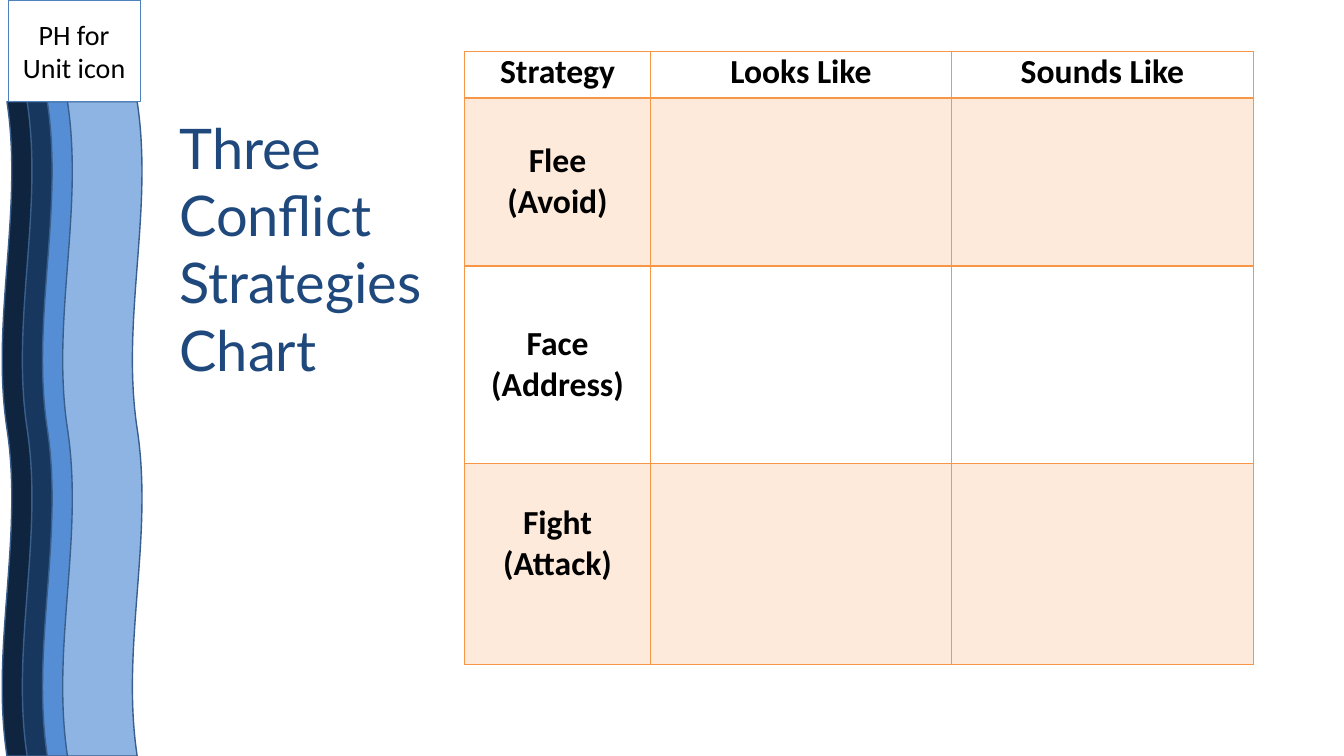
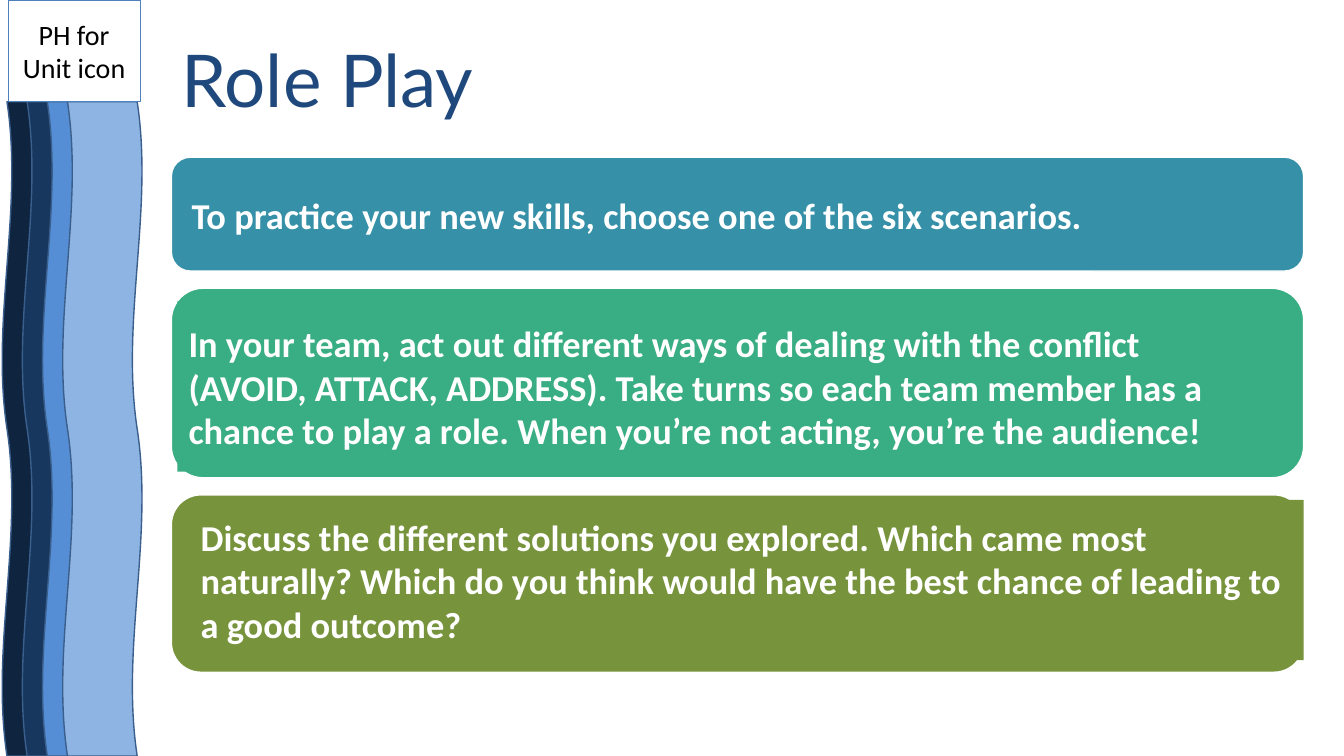
from pptx import Presentation
from pptx.dml.color import RGBColor
from pptx.enum.shapes import MSO_SHAPE as Shape
from pptx.enum.text import MSO_ANCHOR as Anchor, MSO_AUTO_SIZE as Fit, PP_ALIGN as Align
from pptx.oxml import parse_xml
from pptx.oxml.ns import nsdecls
from pptx.util import Inches, Pt

WHITE, BLACK, NAVY = "FFFFFF", "000000", "1F497D"
ORANGE, PEACH = "F79646", "FDEADA"
WAVES = ["0F243E", "17375E", "558ED5", "8EB4E3"]

HEADS = ["Strategy", "Looks Like", "Sounds Like"]
WAYS = [["Flee", "(Avoid)"], ["Face", "(Address)"], ["Fight", "(Attack)"]]
WIDTHS = [1.84, 2.99, 2.99]
HEIGHTS = [0.46, 1.67, 1.96, 1.99]

# text, colour, band top and height, text box, whether the text box is filled
STEPS = [
    ("To practice your new skills, choose one of the six scenarios.",
     "3690A8", 1.56, 1.13, (1.79, 1.62, 11.05, 1.02), False),
    ("In your team, act out different ways of dealing with the conflict "
     "(AVOID, ATTACK, ADDRESS). Take turns so each team member has a chance "
     "to play a role. When you’re not acting, you’re the audience!",
     "39AD84", 2.86, 1.88, (1.76, 2.99, 10.72, 1.69), True),
    ("Discuss the different solutions you explored. Which came most naturally? "
     "Which do you think would have the best chance of leading to a good outcome?",
     "77933C", 4.91, 1.76, (1.88, 4.96, 11.05, 1.59), True),
]


def rgb(code):
    return RGBColor.from_string(code)


def write(frame, *lines, size, color, font="Calibri", bold=False,
          align=Align.LEFT, space=None):
    frame.word_wrap = True
    for i, line in enumerate(lines):
        para = frame.add_paragraph() if i else frame.paragraphs[0]
        para.alignment = align
        para.line_spacing = space
        run = para.add_run()
        run.text = line
        face = run.font
        face.name, face.size, face.bold = font, Pt(size), bold
        face.color.rgb = rgb(color)


def draw(slide, kind, box, fill=None, line=None, width=1):
    shape = slide.shapes.add_shape(kind, *map(Inches, box))
    shape.shadow.inherit = False
    if fill:
        shape.fill.solid()
        shape.fill.fore_color.rgb = rgb(fill)
    else:
        shape.fill.background()
    if line:
        shape.line.color.rgb = rgb(line)
        shape.line.width = Pt(width)
    else:
        shape.line.fill.background()
    return shape


def brand(slide):
    """Build the side waves and icon box, then move them to the slide's layout."""
    parts = []
    for i, fill in enumerate(WAVES):
        wave = draw(slide, Shape.DOUBLE_WAVE, (-2.83 + 0.2 * i, 3.86, 6.49, 0.79),
                    fill, "3A5F8C")
        wave.rotation = 270
        parts.append(wave)
    icon = draw(slide, Shape.RECTANGLE, (0.08, 0, 1.31, 1.01), line="4F81BD", width=0.75)
    write(icon.text_frame, "PH for Unit icon", size=20, color=BLACK, align=Align.CENTER)
    tree = slide.slide_layout.element.cSld.spTree
    for part in parts + [icon]:
        tree.append(part.element)


def head(slide, text, box, size, space=None):
    title = slide.shapes.title
    title.left, title.top, title.width, title.height = map(Inches, box)
    frame = title.text_frame
    frame.auto_size = Fit.NONE
    frame.vertical_anchor = Anchor.MIDDLE
    write(frame, text, size=size, color=NAVY, font="Lato", space=space)


def edge(cell, thick):
    """Give a cell orange borders, with the bottom one of the given points."""
    props = cell._tc.get_or_add_tcPr()
    for side, points in zip("LRTB", (1, 1, 1, thick)):
        props.append(parse_xml(
            f'<a:ln{side} {nsdecls("a")} w="{Pt(points)}"><a:solidFill>'
            f'<a:srgbClr val="{ORANGE}"/></a:solidFill></a:ln{side}>'))


def chart(slide):
    box = (4.61, 0.51, sum(WIDTHS), sum(HEIGHTS))
    table = slide.shapes.add_table(len(HEIGHTS), len(WIDTHS), *map(Inches, box)).table
    table.first_row = table.horz_banding = False
    for col, width in zip(table.columns, WIDTHS):
        col.width = Inches(width)
    grid = [[[name] for name in HEADS]] + [[way, [], []] for way in WAYS]
    for r, row in enumerate(grid):
        table.rows[r].height = Inches(HEIGHTS[r])
        for c, lines in enumerate(row):
            cell = table.cell(r, c)
            edge(cell, 1 if r else 2)
            if r % 2:
                cell.fill.solid()
                cell.fill.fore_color.rgb = rgb(PEACH)
            else:
                cell.fill.background()
            cell.margin_left = cell.margin_right = Inches(0.09)
            cell.margin_top = cell.margin_bottom = 0
            cell.vertical_anchor = Anchor.MIDDLE if r else Anchor.TOP
            write(cell.text_frame, *lines, size=24, color=BLACK, bold=True,
                  align=Align.CENTER)
    table.cell(len(WAYS), 0).margin_bottom = Inches(0.41)


def steps(slide):
    for text, fill, top, height, box, solid in STEPS:
        draw(slide, Shape.ROUNDED_RECTANGLE, (1.7, top, 11.23, height), fill, WHITE)
        if solid:
            label = draw(slide, Shape.RECTANGLE, box, fill)
        else:
            label = slide.shapes.add_textbox(*map(Inches, box))
        frame = label.text_frame
        frame.vertical_anchor = Anchor.MIDDLE
        frame.margin_left = frame.margin_right = Inches(0.11)
        frame.margin_top = frame.margin_bottom = Inches(0.11)
        write(frame, text, size=26, color=WHITE, bold=True)


def main():
    deck = Presentation()
    deck.slide_width, deck.slide_height = Inches(13.33), Inches(7.5)
    layout = deck.slide_layouts.get_by_name("Title Only")

    first = deck.slides.add_slide(layout)
    brand(first)
    head(first, "Three Conflict Strategies Chart", (1.68, 0.86, 2.93, 3.2), 40)
    chart(first)

    second = deck.slides.add_slide(layout)
    head(second, "Role Play", (1.7, 0.21, 10.72, 1.24), 52, space=0.9)
    steps(second)

    deck.save("out.pptx")


if __name__ == "__main__":
    main()
